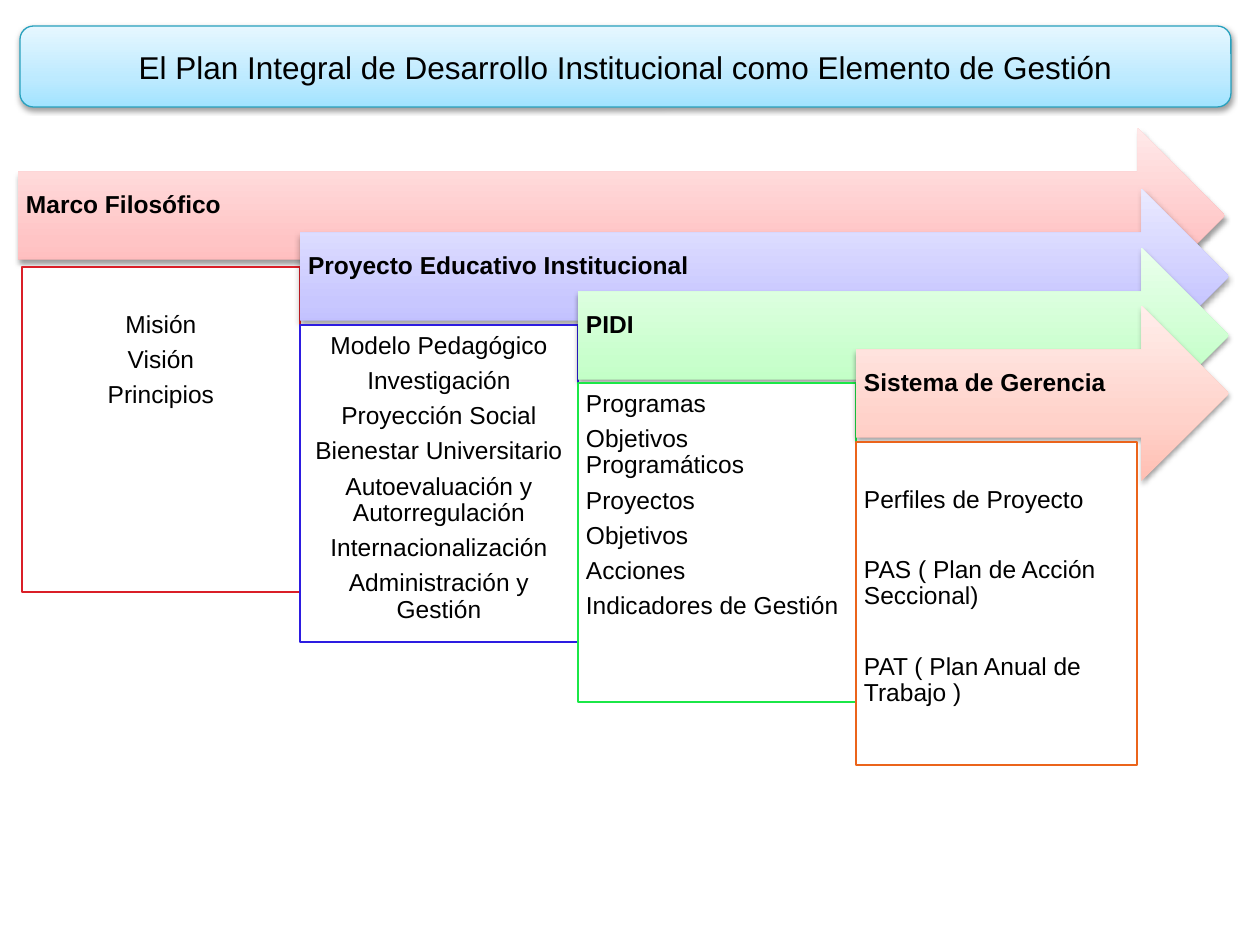
from copy import deepcopy

from lxml import etree
from pptx import Presentation
from pptx.dml.color import RGBColor
from pptx.enum.shapes import MSO_SHAPE as Shape
from pptx.enum.text import MSO_ANCHOR as Anchor, PP_ALIGN as Align
from pptx.oxml.ns import qn
from pptx.util import Emu, Pt

EMU_PER_PX = 914400 / 126
FONT = "Arial"
STEP_GAP = 5    # points between paragraphs
WIDE_GAP = 25   # points between separated paragraphs
ARROW_HEIGHT = 175

# Title, arrow (left, top, width), gradient, box (left, top, width, height),
# border, items, alignment, top inset, paragraph gap
STAGES = [
    ("Marco Filosófico", (18, 128, 1207), ("FFACAD", "FFC4C5", "FFE9E9"),
     (22, 267, 278, 325), "DA1F28",
     ["Misión", "Visión", "Principios"], Align.CENTER, 45, STEP_GAP),
    ("Proyecto Educativo Institucional", (300, 189, 929),
     ("B1AFFF", "C8C7FF", "EAEAFF"), (300, 325, 278, 317), "2D1CE1",
     ["Modelo Pedagógico", "Investigación", "Proyección Social",
      "Bienestar Universitario", "Autoevaluación y Autorregulación",
      "Internacionalización", "Administración y Gestión"],
     Align.CENTER, 8, STEP_GAP),
    ("PIDI", (578, 248, 651), ("B1FFB7", "C8FFCC", "EAFFEC"),
     (578, 383, 278, 319), "1BE747",
     ["Programas", "Objetivos Programáticos", "Proyectos", "Objetivos",
      "Acciones", "Indicadores de Gestión"], Align.LEFT, 8, STEP_GAP),
    ("Sistema de Gerencia", (856, 306, 373), ("FFBFB3", "FFD2CA", "FFEEEB"),
     (856, 442, 281, 323), "EB641B",
     ["Perfiles de Proyecto", "PAS ( Plan de Acción Seccional)",
      "PAT ( Plan Anual de Trabajo )"], Align.LEFT, 45, WIDE_GAP),
]


def px(length):
    return Emu(round(length * EMU_PER_PX))


def color(value):
    return RGBColor.from_string(value)


def add_shape(slide, kind, left, top, width, height, border=None):
    shape = slide.shapes.add_shape(kind, px(left), px(top), px(width), px(height))
    shape.shadow.inherit = False
    if border:
        shape.line.color.rgb = color(border)
        shape.line.width = Pt(0.75)
    else:
        shape.line.fill.background()
    return shape


def fill_gradient(shape, colors):
    """Blend three colours from the bottom edge to the top."""
    shape.fill.gradient()
    shape.fill.gradient_angle = 90
    stop_list = shape._element.spPr.find(qn("a:gradFill")).find(qn("a:gsLst"))
    stop_list.append(deepcopy(stop_list[-1]))
    for stop, value, position in zip(shape.fill.gradient_stops, colors, (0, 0.35, 1)):
        stop.color.rgb = color(value)
        stop.position = position


def add_shadow(shape):
    effects = shape._element.spPr.find(qn("a:effectLst"))
    shadow = etree.SubElement(effects, qn("a:outerShdw"), blurRad="40000",
                              dist="20000", dir="5400000", rotWithShape="0")
    black = etree.SubElement(shadow, qn("a:srgbClr"), val="000000")
    etree.SubElement(black, qn("a:alpha"), val="38000")


def write_text(shape, lines, size=14, bold=False, align=Align.LEFT,
               anchor=Anchor.MIDDLE, insets=(8, 8, 8, 8), spacing=0.9, gap=0):
    frame = shape.text_frame
    frame.word_wrap = True
    frame.vertical_anchor = anchor
    (frame.margin_left, frame.margin_top,
     frame.margin_right, frame.margin_bottom) = map(px, insets)
    for index, line in enumerate(lines):
        paragraph = frame.paragraphs[0] if index == 0 else frame.add_paragraph()
        paragraph.text = line
        paragraph.alignment = align
        paragraph.line_spacing = spacing
        paragraph.space_before = Pt(gap if index else 0)
        paragraph.font.name = FONT
        paragraph.font.size = Pt(size)
        paragraph.font.bold = bold
        paragraph.font.color.rgb = color("000000")


def add_title(slide, text):
    banner = add_shape(slide, Shape.ROUNDED_RECTANGLE, 20, 26, 1211, 81, "28A1BE")
    fill_gradient(banner, ("A1E3FF", "BDEAFF", "E6F7FF"))
    add_shadow(banner)
    write_text(banner, [text], size=18, align=Align.CENTER, spacing=1.0)


def add_stage_arrow(slide, title, place, colors):
    arrow = add_shape(slide, Shape.RIGHT_ARROW, *place, ARROW_HEIGHT)
    fill_gradient(arrow, colors)
    add_shadow(arrow)
    write_text(arrow, [title], bold=True, insets=(8, 8, 35, 28))


def add_stage_box(slide, place, border, items, align, top_inset, gap):
    box = add_shape(slide, Shape.RECTANGLE, *place, border)
    box.fill.solid()
    box.fill.fore_color.rgb = color("FFFFFF")
    write_text(box, items, align=align, anchor=Anchor.TOP,
               insets=(8, top_inset, 8, 8), gap=gap)


def main():
    presentation = Presentation()
    presentation.slide_width = px(1260)
    presentation.slide_height = px(945)
    slide = presentation.slides.add_slide(presentation.slide_layouts[6])

    add_title(slide, "El Plan Integral de Desarrollo Institucional como Elemento de Gestión")
    # Each stage overlaps the one before it
    for title, arrow_place, colors, *box in STAGES:
        add_stage_arrow(slide, title, arrow_place, colors)
        add_stage_box(slide, *box)

    presentation.save("out.pptx")


if __name__ == "__main__":
    main()
